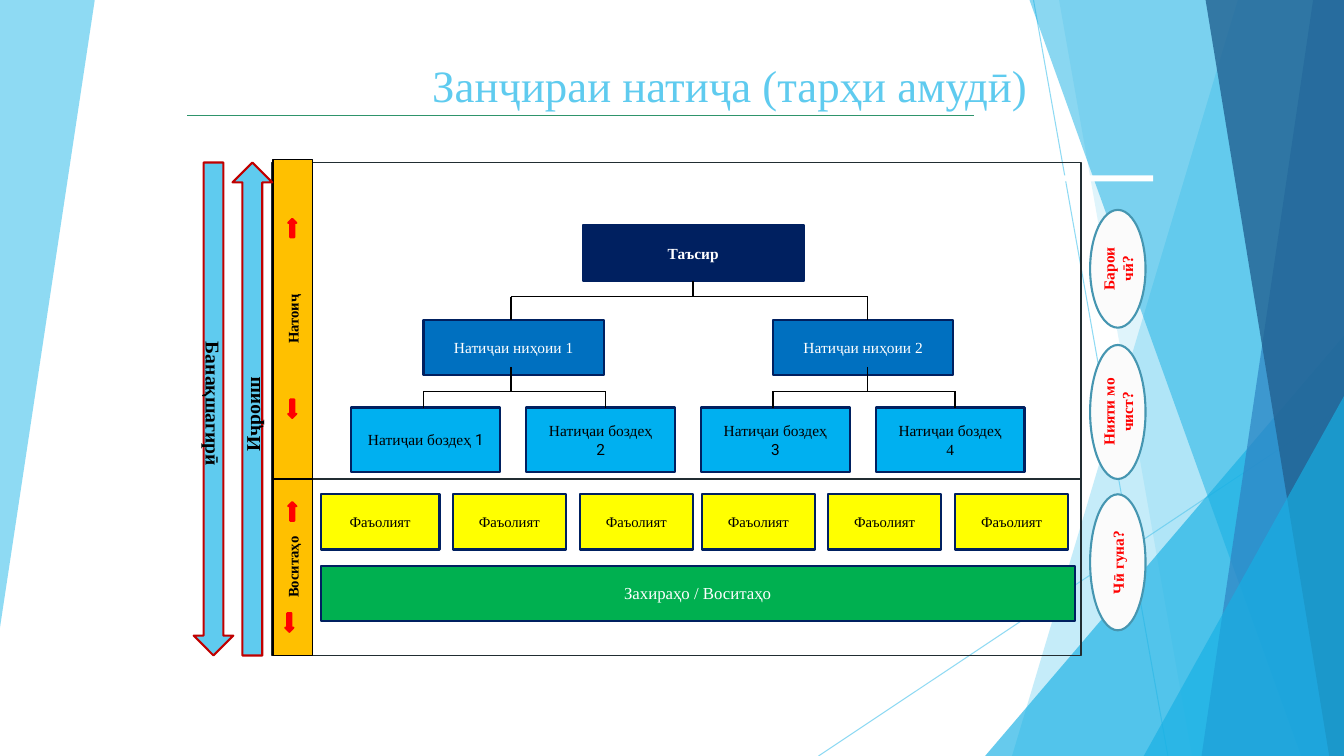
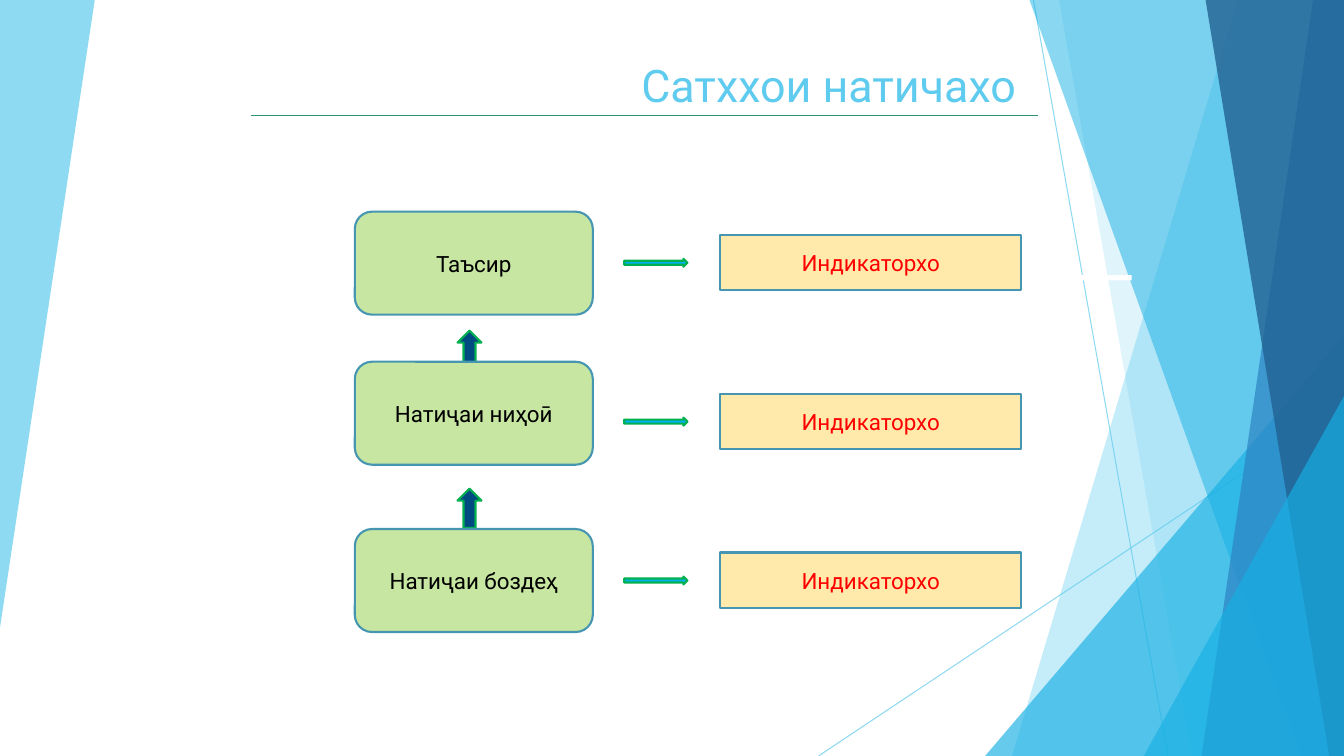
from dataclasses import dataclass

from lxml.etree import SubElement
from pptx import Presentation
from pptx.dml.color import RGBColor
from pptx.enum.shapes import MSO_CONNECTOR, MSO_SHAPE as Preset
from pptx.enum.text import MSO_ANCHOR as Anchor, PP_ALIGN as Align
from pptx.oxml.ns import qn
from pptx.util import Inches, Pt

SERIF = "Times New Roman"
SANS = "Roboto"

BLACK = RGBColor(0x00, 0x00, 0x00)
WHITE = RGBColor(0xFF, 0xFF, 0xFF)
RED = RGBColor(0xFF, 0x00, 0x00)
DARK_RED = RGBColor(0xC0, 0x00, 0x00)
SKY = RGBColor(0x5F, 0xCB, 0xEF)
AZURE = RGBColor(0x17, 0xB0, 0xE4)
BLUE = RGBColor(0x2E, 0x83, 0xC3)
STEEL = RGBColor(0x22, 0x62, 0x92)
NAVY = RGBColor(0x00, 0x20, 0x60)
OUTCOME_BLUE = RGBColor(0x00, 0x70, 0xC0)
OUTPUT_BLUE = RGBColor(0x00, 0xB0, 0xF0)
DEEP_BLUE = RGBColor(0x00, 0x4A, 0x82)
TEAL = RGBColor(0x46, 0x96, 0xB1)
YELLOW = RGBColor(0xFF, 0xFF, 0x00)
AMBER = RGBColor(0xFF, 0xC0, 0x00)
GREEN = RGBColor(0x00, 0xB0, 0x50)
LIGHT_GREEN = RGBColor(0xC6, 0xE6, 0xA2)
RULE_GREEN = RGBColor(0x2E, 0x94, 0x6B)
FRAME_GRAY = RGBColor(0x21, 0x2D, 0x32)
OFF_WHITE = RGBColor(0xFB, 0xFB, 0xFB)


@dataclass
class Box:
    """A rectangle in inches; its areas are given in percent of its size."""
    left: float
    top: float
    width: float
    height: float

    def area(self, left, top, width, height):
        return Box(self.left + self.width * left / 100,
                   self.top + self.height * top / 100,
                   self.width * width / 100,
                   self.height * height / 100)

    def point(self, x, y):
        corner = self.area(x, y, 0, 0)
        return Inches(corner.left), Inches(corner.top)

    def turned(self):
        """The box that covers this one after a quarter turn."""
        shift = (self.width - self.height) / 2
        return Box(self.left + shift, self.top - shift, self.height, self.width)

    def lengths(self):
        return [Inches(n) for n in (self.left, self.top, self.width, self.height)]


SLIDE = Box(0, 0, 13.33, 7.5)


def fade(shape, opacity):
    for color in shape.element.iter(qn("a:srgbClr")):
        SubElement(color, qn("a:alpha")).set("val", str(opacity * 1000))


def paint(shape, fill=None, line=None, weight=1.5, opacity=100):
    shape.shadow.inherit = False
    if fill is None:
        shape.fill.background()
    else:
        shape.fill.solid()
        shape.fill.fore_color.rgb = fill
        if opacity < 100:
            fade(shape, opacity)
    if line is None:
        shape.line.fill.background()
    else:
        shape.line.color.rgb = line
        shape.line.width = Pt(weight)
    return shape


def add_preset(slide, preset, box, rotation=0, **paint_format):
    shape = slide.shapes.add_shape(
        preset, *(box.turned() if rotation else box).lengths())
    shape.rotation = rotation
    return paint(shape, **paint_format)


def add_line(slide, box, start, end, color=BLACK, weight=1, opacity=100):
    line = slide.shapes.add_connector(
        MSO_CONNECTOR.STRAIGHT, *box.point(*start), *box.point(*end))
    line.line.color.rgb = color
    line.line.width = Pt(weight)
    SubElement(line.element.spPr, qn("a:effectLst"))
    if opacity < 100:
        fade(line, opacity)


def write(shape, *paragraphs, size=11, color=BLACK, font=SERIF, bold=False,
          align=Align.CENTER, anchor=Anchor.MIDDLE, direction=None):
    """Each paragraph is a string or a list of (text, font) runs."""
    frame = shape.text_frame
    frame.word_wrap = True
    frame.vertical_anchor = anchor
    if direction:
        shape.element.txBody.find(qn("a:bodyPr")).set("vert", direction)
    for index, content in enumerate(paragraphs):
        paragraph = frame.add_paragraph() if index else frame.paragraphs[0]
        paragraph.alignment = align
        runs = [(content, font)] if isinstance(content, str) else content
        for text, run_font in runs:
            run = paragraph.add_run()
            run.text = text
            run.font.name = run_font
            run.font.size = Pt(size)
            run.font.bold = bold
            run.font.color.rgb = color


def add_polygon(slide, points, fill, opacity):
    first, *others = [SLIDE.point(*point) for point in points]
    builder = slide.shapes.build_freeform(*first)
    builder.add_line_segments(others, close=True)
    paint(builder.convert_to_shape(), fill, opacity=opacity)


def add_panel(slide, top_x, bottom_x, fill, opacity):
    """A facet that runs from a slanted edge to the right side of the slide."""
    points = [(top_x, 0), (100, 0), (100, 100), (bottom_x, 100)]
    add_polygon(slide, points, fill, opacity)


def add_corner(slide, left, top):
    corner = add_preset(slide, Preset.ISOSCELES_TRIANGLE,
                        SLIDE.area(left, top, 100 - left, 100 - top),
                        fill=AZURE, opacity=66)
    corner.adjustments[0] = 1


def add_backdrop(slide):
    add_polygon(slide, [(0, 0), (7.05, 0), (0, 83)], SKY, 70)
    for start, end in (((76.9, 0), (86.9, 100)), ((100, 53.7), (60.9, 100))):
        add_line(slide, SLIDE, start, end, SKY, 0.75, 70)
    add_panel(slide, 92.1, 75.3, SKY, 36)
    add_panel(slide, 78.8, 88.7, SKY, 20)
    add_corner(slide, 73.3, 44.4)
    add_panel(slide, 76.6, 96.8, AZURE, 50)
    add_panel(slide, 97.7, 89.4, BLUE, 70)
    add_panel(slide, 89.7, 98.9, STEEL, 80)
    add_corner(slide, 85.1, 52.4)


def add_base_slide(presentation, title, font, rule_left, band, right_inset=0.1):
    slide = presentation.slides.add_slide(presentation.slide_layouts[6])
    add_backdrop(slide)
    add_preset(slide, Preset.RECTANGLE, band, fill=WHITE)
    add_line(slide, SLIDE, (rule_left, 15.3), (rule_left + 58.5, 15.3), RULE_GREEN)
    title_box = slide.shapes.add_textbox(*SLIDE.area(17.8, 0.7, 59.4, 14.7).lengths())
    title_box.text_frame.margin_right = Inches(right_inset)
    write(title_box, title, size=32, color=SKY, font=font,
          align=Align.RIGHT, anchor=Anchor.BOTTOM)
    return slide


def add_card(slide, box, *paragraphs, fill, **text_format):
    card = add_preset(slide, Preset.RECTANGLE, box, fill=fill, line=NAVY)
    write(card, *paragraphs, **text_format)


def add_bracket(slide, box, stem, left, right, top, bar, bottom):
    add_line(slide, box, (stem, top), (stem, bar))
    add_line(slide, box, (left, bar), (right, bar))
    for x in (left, right):
        add_line(slide, box, (x, bar), (x, bottom))


def add_results(slide, box):
    add_card(slide, box.area(38.4, 19.7, 27.3, 17.7), "Таъсир",
             fill=NAVY, color=WHITE, bold=True)
    outcome_lefts = (18.7, 61.9)
    for number, left in enumerate(outcome_lefts, 1):
        add_card(slide, box.area(left, 49.7, 22.3, 17.5),
                 f"Натиҷаи ниҳоии {number}", fill=OUTCOME_BLUE, color=WHITE)
    outputs = (
        [[("Натиҷаи боздеҳ ", SERIF), ("1", SANS)]],
        ["Натиҷаи боздеҳ", [("2", SANS)]],
        ["Натиҷаи боздеҳ", [("3", SANS)]],
        ["Натиҷаи боздеҳ", "4"],
    )
    for column, paragraphs in enumerate(outputs):
        add_card(slide, box.area(9.8 + 21.6 * column, 77.4, 18.4, 20.4),
                 *paragraphs, fill=OUTPUT_BLUE)
    add_preset(slide, Preset.RECTANGLE, box, line=FRAME_GRAY, weight=1.25)
    stems = (29.5, 73.6)
    add_bracket(slide, box, 52, *stems, top=37.3, bar=42.4, bottom=49.7)
    for stem, left in zip(stems, outcome_lefts):
        add_bracket(slide, box, stem, left, left + 22.5,
                    top=64.6, bar=72.3, bottom=77.7)


def add_means(slide, box):
    cells = ((6, 14.7), (22.3, 14), (38, 14), (53.1, 14), (68.7, 14), (84.4, 14))
    for left, width in cells:
        add_card(slide, box.area(left, 8.6, width, 31.4), "Фаъолият",
                 fill=YELLOW, size=10.5)
    add_card(slide, box.area(6, 49.1, 93.2, 31.4), "Захираҳо / Воситаҳо",
             fill=GREEN, size=12, color=WHITE)
    add_preset(slide, Preset.RECTANGLE, box, line=FRAME_GRAY, weight=1.25)


def add_side_strip(slide, box, label, up_top, down_top, down_left, arrow_height):
    strip = add_preset(slide, Preset.RECTANGLE, box, rotation=270,
                       fill=AMBER, line=BLACK, weight=1)
    write(strip, label, size=10.5, bold=True)
    for preset, left, top in ((Preset.UP_ARROW, 38.5, up_top),
                              (Preset.DOWN_ARROW, down_left, down_top)):
        add_preset(slide, preset, box.area(left, top, 20.5, arrow_height),
                   fill=RED, line=RED)


def add_direction_arrows(slide, box):
    arrows = ((Preset.DOWN_ARROW, -9.7, "Банақшагирӣ", "vert"),
              (Preset.UP_ARROW, -4.9, "Иҷроиш", "vert270"))
    for preset, left, label, direction in arrows:
        arrow = add_preset(slide, preset, box.area(left, 0, 4.9, 100),
                           fill=SKY, line=DARK_RED)
        write(arrow, label, size=14, bold=True, direction=direction)


def add_questions(slide, box):
    questions = (("Барои чӣ?", 9.6, 23.9), ("Нияти мо чист?", 37, 27.2),
                 ("Чӣ гуна?", 67.3, 27.6))
    for text, top, height in questions:
        oval = add_preset(slide, Preset.OVAL, box.area(101.1, top, 6.85, height),
                          rotation=270, fill=OFF_WHITE, line=TEAL)
        write(oval, text, color=RED, bold=True)


def build_chain_slide(presentation):
    slide = add_base_slide(presentation, "Занҷираи натиҷа (тарҳи амудӣ)", SERIF,
                           13.95, SLIDE.area(25.6, 23.2, 60.2, 0.8))
    chain = SLIDE.area(20.25, 21.5, 60.2, 65.2)
    results = chain.area(0, 0, 100, 64.2)
    means = chain.area(0, 64.2, 100, 35.8)
    add_results(slide, results)
    add_means(slide, means)
    add_side_strip(slide, means.area(0.1, 0, 4.9, 100), "Воситаҳо",
                   13.1, 76, 31, 10.6)
    add_side_strip(slide, results.area(0.1, -1, 4.9, 101), "Натоиҷ",
                   18.6, 75.1, 38.5, 5.8)
    add_direction_arrows(slide, chain)
    add_questions(slide, chain)


def add_levels(slide, box):
    levels = (("Таъсир", 0), ("Натиҷаи ниҳоӣ", 35.7), ("Натиҷаи боздеҳ", 75.5))
    for row, (label, top) in enumerate(levels):
        if row:
            add_preset(slide, Preset.UP_ARROW,
                       box.area(15.4, 28.3 + 37.6 * (row - 1), 3.6, 9.35),
                       fill=DEEP_BLUE, line=GREEN)
        level = add_preset(slide, Preset.ROUNDED_RECTANGLE,
                           box.area(0, top, 35.7, 24.5),
                           fill=LIGHT_GREEN, line=TEAL)
        write(level, label, size=16, font=SANS)
        row_top = 5.5 + 37.8 * row
        indicator = add_preset(slide, Preset.RECTANGLE,
                               box.area(54.8, row_top, 45.2, 13.2),
                               fill=AMBER, line=TEAL, opacity=33)
        write(indicator, "Индикаторхо", size=16, color=RED, font=SANS)
        add_preset(slide, Preset.RIGHT_ARROW,
                   box.area(40.4, row_top + 5.7, 9.5, 1.9),
                   fill=OUTPUT_BLUE, line=GREEN)


def build_levels_slide(presentation):
    slide = add_base_slide(presentation, "Сатххои натичахо", SANS, 18.7,
                           SLIDE.area(24, 36.4, 60.2, 0.7), right_inset=0.21)
    add_levels(slide, SLIDE.area(26.4, 28, 49.6, 55.6))


def main():
    presentation = Presentation()
    presentation.slide_width = Inches(SLIDE.width)
    presentation.slide_height = Inches(SLIDE.height)
    build_chain_slide(presentation)
    build_levels_slide(presentation)
    presentation.save("out.pptx")


if __name__ == "__main__":
    main()
